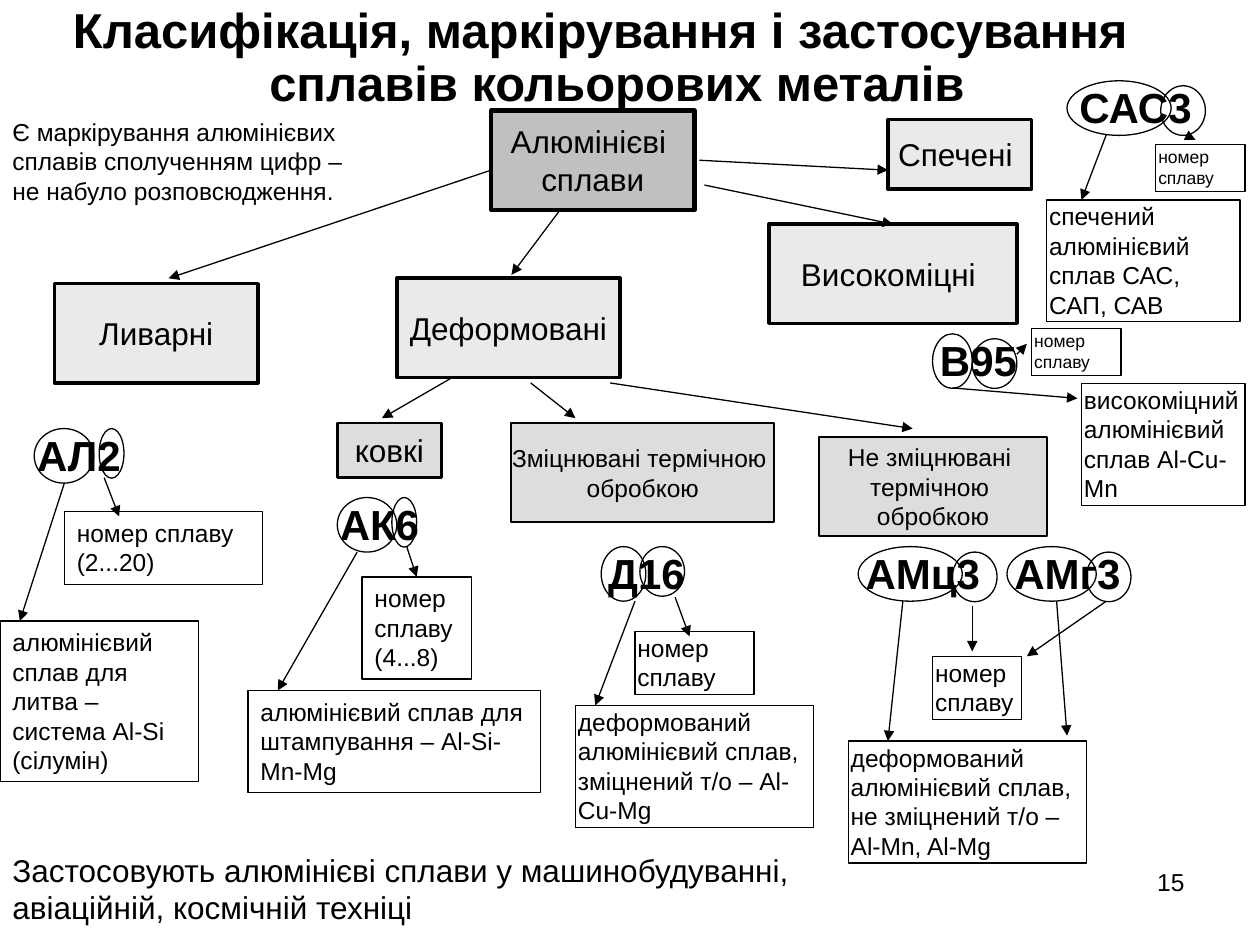
import lxml.etree
import pptx
import pptx.dml.color
import pptx.enum.shapes
import pptx.enum.text
import pptx.oxml.ns
import pptx.util
from pptx.util import Cm

COLORS = {"ink": "000000", "root": "C0C0C0", "branch": "EAEAEA", "leaf": "DDDDDD"}
INK = pptx.dml.color.RGBColor.from_string(COLORS["ink"])
ALIGN = pptx.enum.text.PP_ALIGN
ANCHOR = pptx.enum.text.MSO_ANCHOR
FIT = pptx.enum.text.MSO_AUTO_SIZE
SHAPE = pptx.enum.shapes.MSO_SHAPE


def write(box, text, size=14, bold=False, align=ALIGN.LEFT, anchor=ANCHOR.TOP,
          wrap=True, fit=FIT.NONE, inset=(0.25, 0.13), hanging=False):
    """Fill a shape with text, one paragraph per line; inset is (side, top) in cm."""
    frame = box.text_frame
    frame.word_wrap = wrap
    frame.auto_size = fit
    frame.vertical_anchor = anchor
    frame.margin_left = frame.margin_right = Cm(inset[0])
    frame.margin_top = frame.margin_bottom = Cm(inset[1])
    frame.text = text
    for para in frame.paragraphs:
        para.alignment = align
        if hanging:
            para.line_spacing = 0.9
            properties = para._p.get_or_add_pPr()
            properties.set("marL", str(Cm(0.95)))
            properties.set("indent", str(-Cm(0.95)))
        for span in para.runs:
            span.font.name = "Arial"
            span.font.size = pptx.util.Pt(size)
            span.font.bold = bold
            span.font.color.rgb = INK


def add_outline(kind, place, fill=None, width=0.75):
    """Add a black-outlined shape; place is left, top, width, height in cm."""
    shape = page.shapes.add_shape(kind, *map(Cm, place))
    shape.shadow.inherit = False
    if fill:
        shape.fill.solid()
        shape.fill.fore_color.rgb = pptx.dml.color.RGBColor.from_string(COLORS[fill])
    else:
        shape.fill.background()
    shape.line.color.rgb = INK
    shape.line.width = pptx.util.Pt(width)
    return shape


deck = pptx.Presentation()
deck.slide_width, deck.slide_height = Cm(25.4), Cm(19.05)
page = deck.slides.add_slide(deck.slide_layouts[5])

title = page.shapes.title
title.left, title.top, title.width, title.height = Cm(0), Cm(0), Cm(24.2), Cm(2.29)
write(title, "Класифікація, маркірування і застосування сплавів кольорових металів ",
      size=28, bold=True, align=ALIGN.CENTER, hanging=True)

# Classification tree
blocks = [
    ("Алюмінієві \nсплави", (9.9, 2.23, 4.1, 2), "root", 2.5, 18),
    ("Ливарні", (1.1, 5.72, 4.1, 2), "branch", 2, 18),
    ("Деформовані", (8, 5.61, 4.5, 2), "branch", 2, 18),
    ("Високоміцні ", (15.5, 4.52, 5, 2), "branch", 2, 18),
    ("Спечені ", (17.9, 2.41, 2.9, 1.4), "branch", 2, 18),
    ("ковкі", (6.8, 8.53, 2.1, 1.1), "leaf", 1.5, 18),
    ("Зміцнювані термічною \nобробкою", (10.31, 8.53, 5.3, 2), "leaf", 1.25, 14),
    ("Не зміцнювані \nтермічною \nобробкою", (16.51, 8.81, 4.6, 2), "leaf", 1.25, 14),
]
joints = {}
for text, place, fill, width, size in blocks:
    block = add_outline(SHAPE.RECTANGLE, place, fill, width)
    write(block, text, size=size, align=ALIGN.CENTER, anchor=ANCHOR.MIDDLE, wrap=False)
    joints[text.strip()] = block

# Alloy codes: text place, then the ellipses round the letters and round the number
codes = [
    ("АЛ2", (0.5, 8.64, 2.4), (0.69, 8.64, 1.2, 1.1), (2, 8.64, 0.5, 1)),
    ("АК6", (6.6, 10.03, 2.2), (6.8, 10.03, 1.2, 1.1), (7.9, 10.03, 0.5, 1)),
    ("Д16", (12.01, 11.02, 2.2), (12.12, 11.02, 0.9, 1.1), (12.9, 11.02, 0.9, 1)),
    ("АМц3", (17.2, 11.02, 3), (17.3, 11.02, 2.1, 1.1), (19.2, 11.13, 0.9, 1)),
    ("АМг3", (20.2, 11.02, 2.7), (20.3, 11.02, 1.8, 1.1), (21.9, 11.13, 0.9, 1)),
    ("САС3", (21.51, 1.63, 3.2), (21.51, 1.63, 2.1, 1.1), (23.4, 1.73, 0.9, 1)),
    ("В95", (18.7, 6.73, 2.3), (18.8, 6.73, 0.8, 1.1), (19.6, 6.83, 0.9, 1)),
]
for text, place, letters, number in codes:
    add_outline(SHAPE.OVAL, letters)
    add_outline(SHAPE.OVAL, number)
    label = page.shapes.add_textbox(*map(Cm, place), Cm(1.17))
    write(label, text, size=24, bold=True, hanging=True)

# Explanations of the codes
wide, tight = (0.25, 0.13), (0.05, 0.03)
notes = [
    ("номер сплаву (2...20)", (1.3, 10.31, 4, 1.47), wide, 14),
    ("алюмінієвий сплав для литва – система Al-Si (сілумін)", (0, 12.52, 4, 3.23), wide, 14),
    ("номер сплаву (4...8)", (7.3, 11.63, 2.2, 2.06), wide, 14),
    ("алюмінієвий сплав для штампування – Al-Si-Mn-Mg", (5, 13.92, 5.9, 2.06), wide, 14),
    ("номер сплаву", (12.8, 12.73, 2.4, 1.27), tight, 14),
    ("деформований алюмінієвий сплав, зміцнений т/о – Al-Cu-Mg",
     (11.6, 14.22, 4.8, 2.46), tight, 14),
    ("номер сплаву", (18.8, 13.23, 1.8, 1.27), tight, 14),
    ("деформований алюмінієвий сплав, не зміцнений т/о – Al-Mn, Al-Mg",
     (17.1, 14.94, 4.8, 2.46), tight, 14),
    ("спечений алюмінієвий сплав САС, САП, САВ", (21.1, 4.03, 3.9, 2.46), tight, 14),
    ("високоміцний алюмінієвий сплав Аl-Сu-Мn", (21.8, 7.73, 3.3, 2.46), tight, 14),
    ("номер сплаву", (23.3, 2.92, 1.8, 0.94), tight, 10),
    ("номер сплаву", (20.8, 6.63, 1.8, 0.94), tight, 10),
]
for text, place, inset, size in notes:
    note = add_outline(SHAPE.RECTANGLE, place)
    write(note, text, size=size, inset=inset, fit=FIT.SHAPE_TO_FIT_TEXT)
    joints[text] = note

# Arrows: start, end, and the box whose top middle the arrow reaches
arrows = [
    ((9.9, 3.43), (3.4, 5.61), None),
    ((11.3, 4.22), (10.31, 5.54), None),
    ((14.1, 3.23), (17.9, 3.43), None),
    ((14.2, 3.73), (18, 4.52), "Високоміцні"),
    ((9.1, 7.62), (7.7, 8.43), None),
    ((10.7, 7.72), (11.6, 8.43), None),
    ((12.3, 7.72), (18.4, 8.64), None),
    ((2.1, 9.63), (2.4, 10.41), None),
    ((1.3, 9.73), (0.4, 12.52), None),
    ((8.2, 11.02), (8.4, 11.63), "номер сплаву (4...8)"),
    ((7.2, 11.13), (5.6, 13.92), None),
    ((13.61, 12.04), (13.9, 12.83), None),
    ((12.8, 12.12), (12, 14.22), None),
    ((19.6, 12.22), (19.6, 13.13), None),
    ((18.2, 12.12), (17.9, 14.94), None),
    ((22.3, 12.12), (20.7, 13.23), None),
    ((21.3, 12.12), (21.51, 14.83), None),
    ((22.3, 2.72), (21.8, 4.03), None),
    ((23.9, 2.72), (24.1, 2.82), None),
    ((19.2, 7.82), (21.72, 8.03), None),
    ((20.5, 7.14), (20.7, 6.93), None),
]
for start, end, target in arrows:
    arrow = page.shapes.add_connector(pptx.enum.shapes.MSO_CONNECTOR.STRAIGHT,
                                      *map(Cm, start + end))
    if target:
        arrow.end_connect(joints[target], 0)
    arrow.line.color.rgb = INK
    arrow.line.width = pptx.util.Pt(0.75)
    head = lxml.etree.SubElement(arrow.line._get_or_add_ln(), pptx.oxml.ns.qn("a:tailEnd"))
    head.set("type", "triangle")
    lxml.etree.SubElement(arrow._element.spPr, pptx.oxml.ns.qn("a:effectLst"))

# Remarks and page number
remarks = [
    ("Є маркірування алюмінієвих сплавів сполученням цифр – не набуло розповсюдження.",
     (0, 2.23, 7.4, 2.03), 14, ALIGN.LEFT),
    ("Застосовують алюмінієві сплави у машинобудуванні, авіаційній, космічній техніці",
     (0, 17.02, 16.6, 1.78), 18, ALIGN.LEFT),
    ("15", (18.2, 17.35, 5.93, 1.32), 14, ALIGN.RIGHT),
]
for text, place, size, align in remarks:
    write(page.shapes.add_textbox(*map(Cm, place)), text, size=size, align=align)

deck.save("out.pptx")
